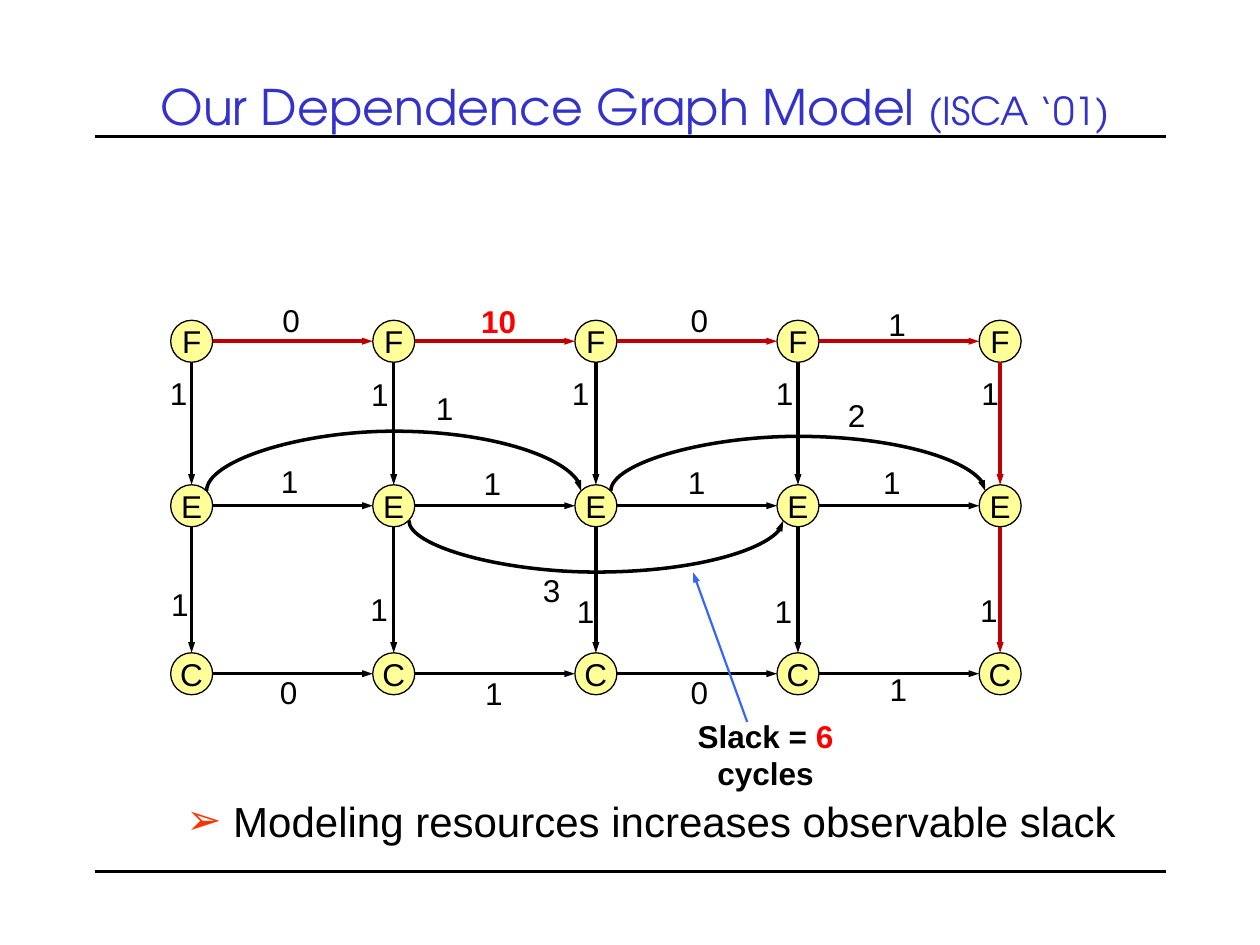
from dataclasses import dataclass
from lxml import etree
from pptx import Presentation
from pptx.dml.color import RGBColor
from pptx.enum.shapes import MSO_CONNECTOR, MSO_SHAPE
from pptx.enum.text import MSO_ANCHOR, PP_ALIGN
from pptx.oxml.ns import qn
from pptx.util import Pt

STRAIGHT, CURVE = MSO_CONNECTOR.STRAIGHT, MSO_CONNECTOR.CURVE
OVAL = MSO_SHAPE.OVAL
TOP, MIDDLE = MSO_ANCHOR.TOP, MSO_ANCHOR.MIDDLE
CENTER = PP_ALIGN.CENTER


@dataclass(frozen=True)
class Theme:
    black: str = "000000"
    title: str = "3333CC"
    node: str = "FFFF99"
    critical: str = "C00000"
    accent: str = "FF0000"
    pointer: str = "3366FF"
    bullet: str = "FF3300"
    title_font: str = "TeX Gyre Adventor"
    font: str = "Arial"
    title_size: float = 28
    cite_size: float = 22
    body_size: float = 24
    label_size: float = 18


T = Theme()


def write(sp, runs, size=T.label_size, font=T.font, anchor=TOP, wrap=True):
    """Fill a shape with one centred paragraph of (text, colour, bold) runs."""
    tf = sp.text_frame
    tf.word_wrap, tf.vertical_anchor = wrap, anchor
    p = tf.paragraphs[0]
    p.alignment = CENTER
    for text, color, bold in runs:
        r = p.add_run()
        r.text = text
        r.font.size, r.font.name, r.font.bold = Pt(size), font, bold
        r.font.color.rgb = RGBColor.from_string(color)
    return p


def connect(x1, y1, x2, y2, color=T.black, width=2, kind=STRAIGHT, arrow=True):
    c = s.shapes.add_connector(kind, Pt(x1), Pt(y1), Pt(x2), Pt(y2))
    c.line.color.rgb = RGBColor.from_string(color)
    c.line.width = Pt(width)
    if arrow:
        etree.SubElement(c.line._get_or_add_ln(), qn("a:tailEnd"),
                         type="triangle", w="sm", len="med")
    etree.SubElement(c._element.spPr, qn("a:effectLst"))
    return c


prs = Presentation()
prs.slide_width, prs.slide_height = Pt(720), Pt(540)
s = prs.slides.add_slide(prs.slide_layouts[1])

# Rules above and below the content
for y in (78, 498):
    connect(54, y, 666, y, width=2.25, arrow=False)

# Title
title, body = s.placeholders
title.left, title.top, title.width, title.height = Pt(60), Pt(30), Pt(606), Pt(60.5)
p = write(title, [("Our Dependence Graph Model ", T.title, False),
                  ("(ISCA ‘01)", T.title, False)], T.title_size, T.title_font, MIDDLE)
p.runs[1].font.size = Pt(T.cite_size)

# Graph grid: one column per instruction, one row per pipeline stage
R = 12
cols = [109.5 + 115.5 * i for i in range(5)]
rows = {"F": 195, "E": 289, "C": 385}

for stage, y in rows.items():
    for x in cols:
        sp = s.shapes.add_shape(OVAL, Pt(x - R), Pt(y - R), Pt(2 * R), Pt(2 * R))
        sp.shadow.inherit = False
        sp.fill.solid()
        sp.fill.fore_color.rgb = RGBColor.from_string(T.node)
        sp.line.color.rgb = RGBColor.from_string(T.black)
        sp.line.width = Pt(0.75)
        write(sp, [(stage, T.black, False)], anchor=MIDDLE, wrap=False)

    # Edges along the row
    color = T.critical if stage == "F" else T.black
    for x1, x2 in zip(cols, cols[1:]):
        connect(x1 + R, y, x2 - R, y, color)

# Edges down each column
for x in cols:
    color = T.critical if x == cols[-1] else T.black
    for upper, lower in ("FE", "EC"):
        connect(x, rows[upper] + R, x, rows[lower] - R, color)

# Curved edges between E nodes: start column, end column, rise (-) or drop (+)
D = 8.5
THIN = 0.1
for first, last, bend in ((0, 2, -30), (1, 3, 26), (2, 4, -27.4)):
    up = bend < 0
    y = rows["E"] + (-D if up else D)
    x1, x2 = cols[first] + D, cols[last] - D
    mid, half = (x1 + x2) / 2, (x2 - x1) / 2
    c = connect(mid, y - half, mid + THIN, y + half, kind=CURVE)
    xfrm = c._element.spPr.find(qn("a:xfrm"))
    xfrm.set("rot", str((90 if up else 270) * 60000))
    xfrm.set("flipV" if up else "flipH", "1")
    guides = c._element.spPr.find(qn("a:prstGeom")).get_or_add_avLst()
    etree.SubElement(guides, qn("a:gd"), name="adj1",
                     fmla=f"val {round(bend / THIN * 100000)}")

# Latency labels: box width, then (text, left, top)
labels = [
    (36, [("0", 148.3, 168.5), ("10", 267, 169), ("0", 381.6, 168.5), ("1", 494.6, 170.6)]),
    (24, [("1", 153.4, 260.6), ("1", 269.3, 261.4), ("1", 386, 261), ("1", 497.5, 261)]),
    (36, [("0", 147, 381), ("1", 264.2, 381.6), ("0", 381.6, 381), ("1", 495.4, 379.4)]),
    (24, [("1", 90, 210), ("1", 205, 211), ("1", 319.7, 210), ("1", 436.3, 210),
          ("1", 553.7, 210)]),
    (24, [("1", 90.7, 330.5), ("1", 204.5, 333.4), ("1", 322.6, 334.8), ("1", 435.6, 334.8),
          ("1", 553, 334)]),
    (24, [("1", 242, 219), ("2", 477.4, 222.5)]),
    (30, [("3", 300.2, 322.6)]),
]
for width, items in labels:
    for text, x, y in items:
        miss = text == "10"
        sp = s.shapes.add_textbox(Pt(x), Pt(y), Pt(width), Pt(29))
        write(sp, [(text, T.accent if miss else T.black, miss)])

# Slack callout
connect(427, 412.6, 396, 327, T.pointer, 1.25)
sp = s.shapes.add_textbox(Pt(368), Pt(406), Pt(139), Pt(50.5))
write(sp, [("Slack = ", T.black, True), ("6 ", T.accent, True), ("cycles", T.black, True)])

# Takeaway bullet
body.left, body.top, body.width, body.height = Pt(69), Pt(450.7), Pt(606), Pt(36)
p = write(body, [(" Modeling resources increases observable slack", T.black, False)], T.body_size)
p.space_before = Pt(0)
pPr = p._p.get_or_add_pPr()
pPr.set("marL", "0")
pPr.set("indent", "0")
bu_color = etree.SubElement(pPr, qn("a:buClr"))
etree.SubElement(bu_color, qn("a:srgbClr"), val=T.bullet)
etree.SubElement(pPr, qn("a:buChar"), char="➢")

prs.save("out.pptx")
